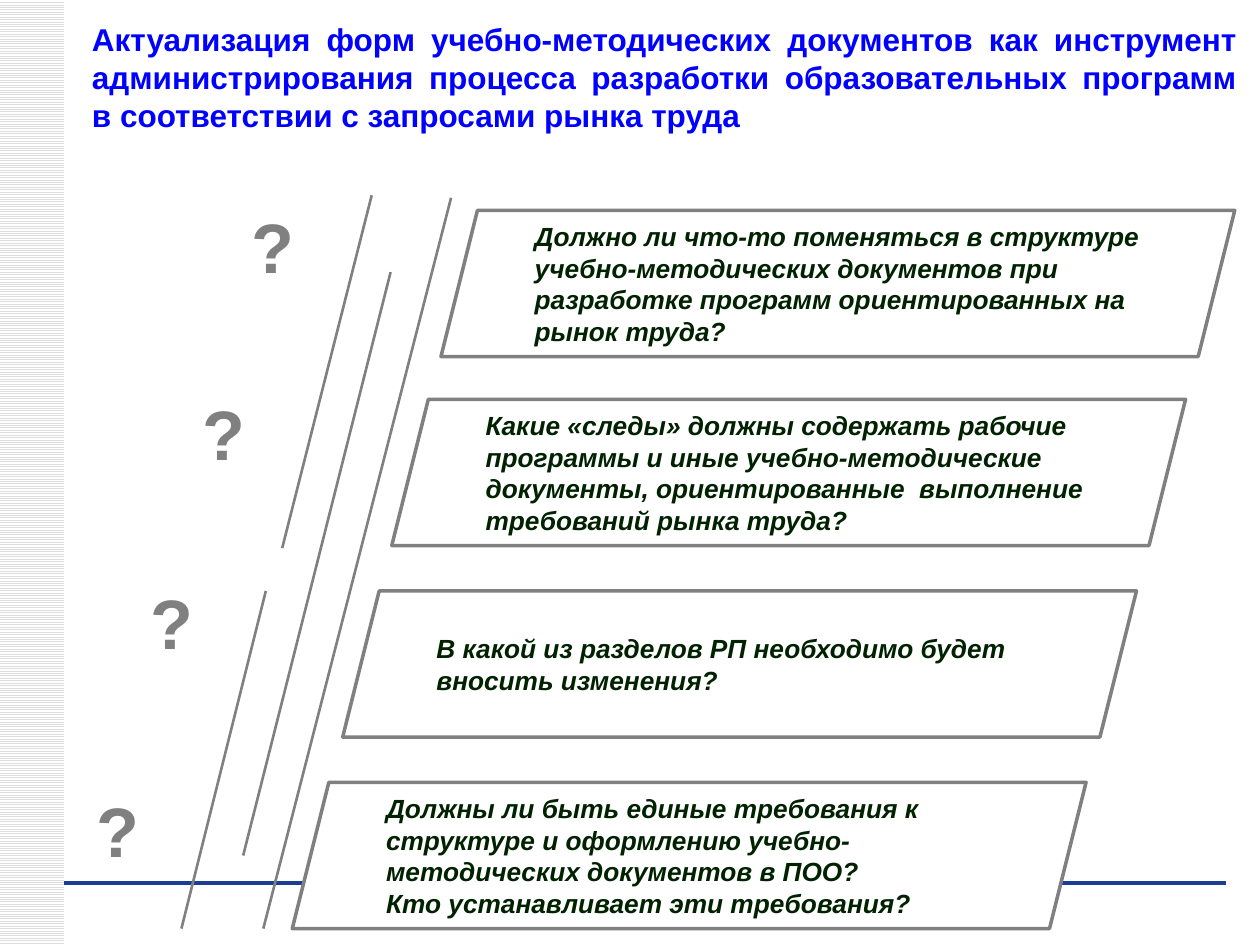
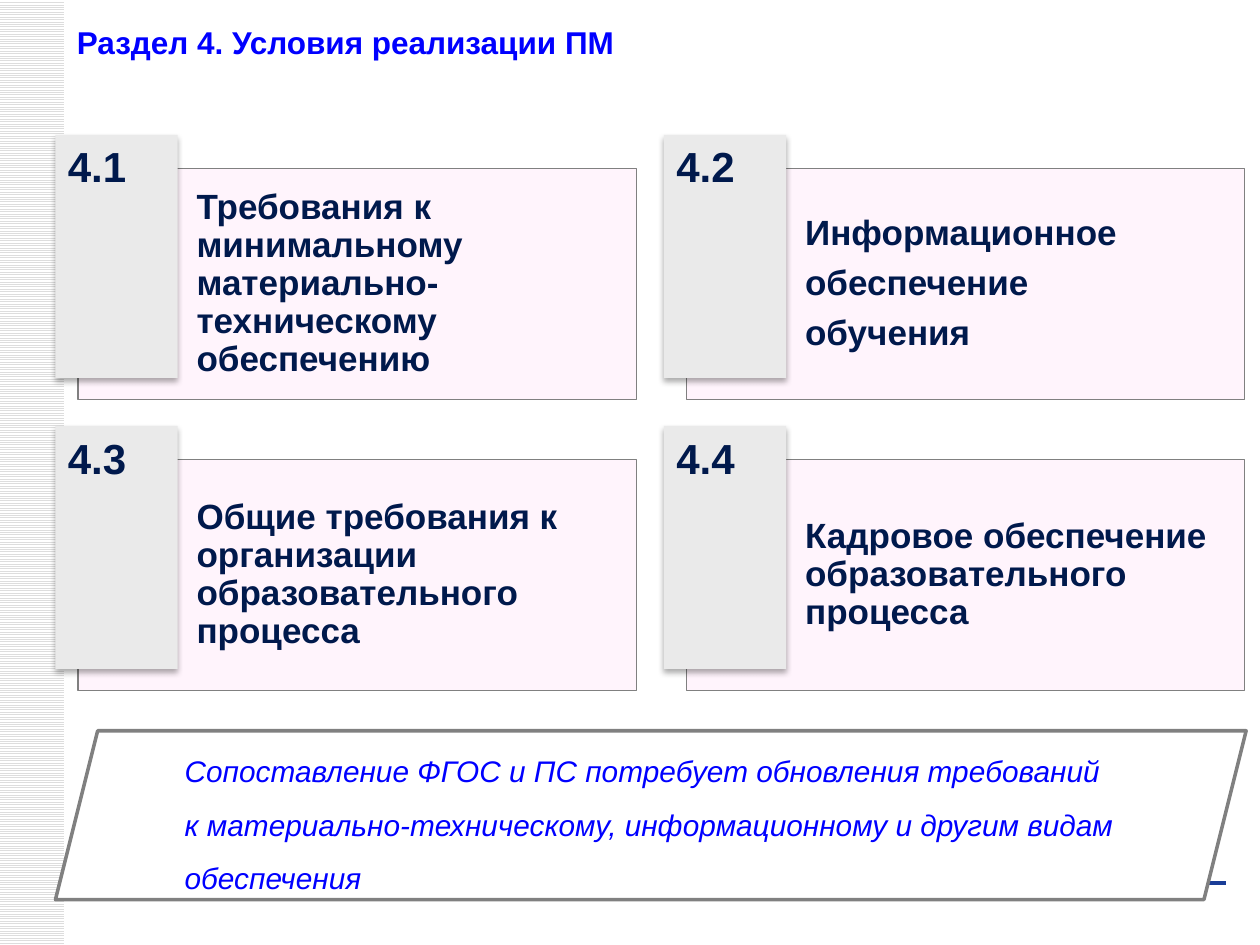
from lxml import etree
from pptx import Presentation
from pptx.dml.color import RGBColor
from pptx.enum.dml import MSO_PATTERN
from pptx.enum.shapes import MSO_CONNECTOR, MSO_SHAPE
from pptx.enum.text import MSO_ANCHOR, MSO_AUTO_SIZE, PP_ALIGN
from pptx.oxml import parse_xml
from pptx.oxml.ns import nsdecls, qn
from pptx.util import Inches, Pt

RECT, PARALLELOGRAM = MSO_SHAPE.RECTANGLE, MSO_SHAPE.PARALLELOGRAM
STRAIGHT = MSO_CONNECTOR.STRAIGHT
TOP, MIDDLE = MSO_ANCHOR.TOP, MSO_ANCHOR.MIDDLE
LEFT, JUSTIFY = PP_ALIGN.LEFT, PP_ALIGN.JUSTIFY

# Shared style
FONT = "Arial"
BLUE, NAVY, GREEN, GRAY = "0000FF", "00194C", "002200", "808080"
WHITE, PINK, TAG_GRAY, STRIPE, FOOTER = "FFFFFF", "FFE5F8", "EAEAEA", "DDDDDD", "1A3D97"

# Slide 1 content
QUESTIONS_TITLE = ("Актуализация форм учебно-методических документов как инструмент "
                   "администрирования процесса разработки образовательных программ "
                   "в соответствии с запросами рынка труда")
# Panel position, question mark position, paragraphs
QUESTIONS = [
    ((3.5, 1.67), (1.9, 1.57),
     ["Должно ли что-то поменяться в структуре учебно-методических документов при "
      "разработке программ ориентированных на рынок труда?"]),
    ((3.11, 3.17), (1.51, 3.05),
     ["Какие «следы» должны содержать рабочие программы и иные учебно-методические "
      "документы, ориентированные  выполнение требований рынка труда?"]),
    ((2.72, 4.69), (1.1, 4.55),
     ["В какой из разделов РП необходимо будет вносить изменения?"]),
    ((2.32, 6.21), (0.67, 6.2),
     ["Должны ли быть единые требования к структуре и оформлению "
      "учебно-методических документов в ПОО?",
      "Кто устанавливает эти требования?"]),
]
SLANTED_LINES = [
    ((3.58, 1.57), (2.09, 7.37)),
    ((3.1, 2.16), (1.93, 6.79)),
    ((2.95, 1.55), (2.24, 4.35)),
    ((2.11, 4.69), (1.44, 7.37)),
]

# Slide 2 content
CONDITIONS_TITLE = "Раздел 4. Условия реализации ПМ"
CONDITIONS = [
    ("4.1", ["Требования к минимальному материально-техническому обеспечению"]),
    ("4.2", ["Информационное", "обеспечение", "обучения"]),
    ("4.3", ["Общие требования к организации образовательного процесса"]),
    ("4.4", ["Кадровое обеспечение образовательного процесса"]),
]
CONCLUSION = ("Сопоставление ФГОС и ПС потребует обновления требований "
              "к материально-техническому, информационному и другим видам обеспечения")


def rgb(color):
    return RGBColor.from_string(color)


def write(shape, paragraphs, size, color, bold=False, italic=False, align=LEFT,
          anchor=TOP, spacing=None, after=None, insets=None):
    frame = shape.text_frame
    frame.word_wrap = True
    frame.auto_size = MSO_AUTO_SIZE.NONE
    frame.vertical_anchor = anchor
    if insets:
        (frame.margin_left, frame.margin_top,
         frame.margin_right, frame.margin_bottom) = map(Inches, insets)
    for index, text in enumerate(paragraphs):
        paragraph = frame.add_paragraph() if index else frame.paragraphs[0]
        paragraph.alignment = align
        if spacing:
            paragraph.line_spacing = spacing
        if after:
            paragraph.space_after = Pt(after)
        run = paragraph.add_run()
        run.text = text
        font = run.font
        font.name, font.size, font.bold, font.italic = FONT, Pt(size), bold, italic
        font.color.rgb = rgb(color)


def add_box(slide, kind, box, fill, line=None, width=0):
    shape = slide.shapes.add_shape(kind, *map(Inches, box))
    shape.shadow.inherit = False
    shape.fill.solid()
    shape.fill.fore_color.rgb = rgb(fill)
    if line:
        shape.line.color.rgb = rgb(line)
        shape.line.width = Pt(width)
    else:
        shape.line.fill.background()
    return shape


def add_panel(slide, box):
    return add_box(slide, PARALLELOGRAM, box, WHITE, GRAY, 2)


def add_line(slide, start, end, color, width):
    line = slide.shapes.add_connector(STRAIGHT, *map(Inches, start + end))
    line.line.color.rgb = rgb(color)
    line.line.width = Pt(width)
    etree.SubElement(line._element.spPr, qn("a:effectLst"))


def set_opacity(shape, percent):
    color = shape.fill._xPr.find(qn("a:solidFill"))[0]
    etree.SubElement(color, qn("a:alpha")).set("val", str(percent * 1000))


def add_soft_shadow(shape):
    effects = shape._element.spPr.find(qn("a:effectLst"))
    effects.append(parse_xml(
        f'<a:outerShdw {nsdecls("a")} blurRad="{Pt(3.5)}" dist="{Pt(2.2)}" '
        'dir="5400000" rotWithShape="0"><a:srgbClr val="000000">'
        '<a:alpha val="32000"/></a:srgbClr></a:outerShdw>'))


def add_slide(prs, title, box, anchor):
    slide = prs.slides.add_slide(prs.slide_layouts[5])
    # Striped side band and footer rule
    band = add_box(slide, RECT, (0, 0, 0.51, 7.5), WHITE)
    band.fill.patterned()
    band.fill.pattern = MSO_PATTERN.LIGHT_HORIZONTAL
    band.fill.fore_color.rgb = rgb(STRIPE)
    band.fill.back_color.rgb = rgb(WHITE)
    add_line(slide, (0.51, 7.01), (9.73, 7.01), FOOTER, 0)
    # Title
    heading = slide.shapes.title
    heading.left, heading.top, heading.width, heading.height = map(Inches, box)
    write(heading, [title], 18, BLUE, bold=True, align=JUSTIFY, anchor=anchor)
    return slide


def build_questions(prs):
    slide = add_slide(prs, QUESTIONS_TITLE, (0.63, 0.11, 9.29, 1.01), TOP)
    for panel_at, _, paragraphs in QUESTIONS:
        panel = add_panel(slide, panel_at + (6.3, 1.16))
        write(panel, paragraphs, 15, GREEN, bold=True, italic=True, anchor=MIDDLE)
    for start, end in SLANTED_LINES:
        add_line(slide, start, end, GRAY, 1.5)
    for _, mark_at, _ in QUESTIONS:
        mark = slide.shapes.add_textbox(*map(Inches, mark_at + (0.5, 0.77)))
        write(mark, ["?"], 40, GRAY, bold=True)


def build_conditions(prs):
    slide = add_slide(prs, CONDITIONS_TITLE, (0.51, 0, 8.26, 0.67), MIDDLE)
    # Two by two grid of cards, each with a number tag
    for index, (number, paragraphs) in enumerate(CONDITIONS):
        row, column = divmod(index, 2)
        left, top = 0.44 + column * 4.83, 1.07 + row * 2.31
        card = add_box(slide, RECT, (left + 0.18, top + 0.27, 4.43, 1.83),
                       PINK, GRAY, 0.75)
        set_opacity(card, 40)
        write(card, paragraphs, 20, NAVY, bold=True, anchor=MIDDLE, spacing=0.9,
              after=7, insets=(0.94, 0.07, 0.07, 0.07))
        tag = add_box(slide, RECT, (left, top, 0.97, 1.93), TAG_GRAY)
        add_soft_shadow(tag)
        write(tag, [number], 24, NAVY, bold=True)
    # Conclusion
    panel = add_panel(slide, (0.44, 5.8, 9.45, 1.34))
    write(panel, [CONCLUSION], 17, BLUE, italic=True, anchor=MIDDLE, spacing=1.5)


def main():
    prs = Presentation()
    prs.slide_width, prs.slide_height = Inches(10), Inches(7.5)
    build_questions(prs)
    build_conditions(prs)
    prs.save("out.pptx")


if __name__ == "__main__":
    main()
